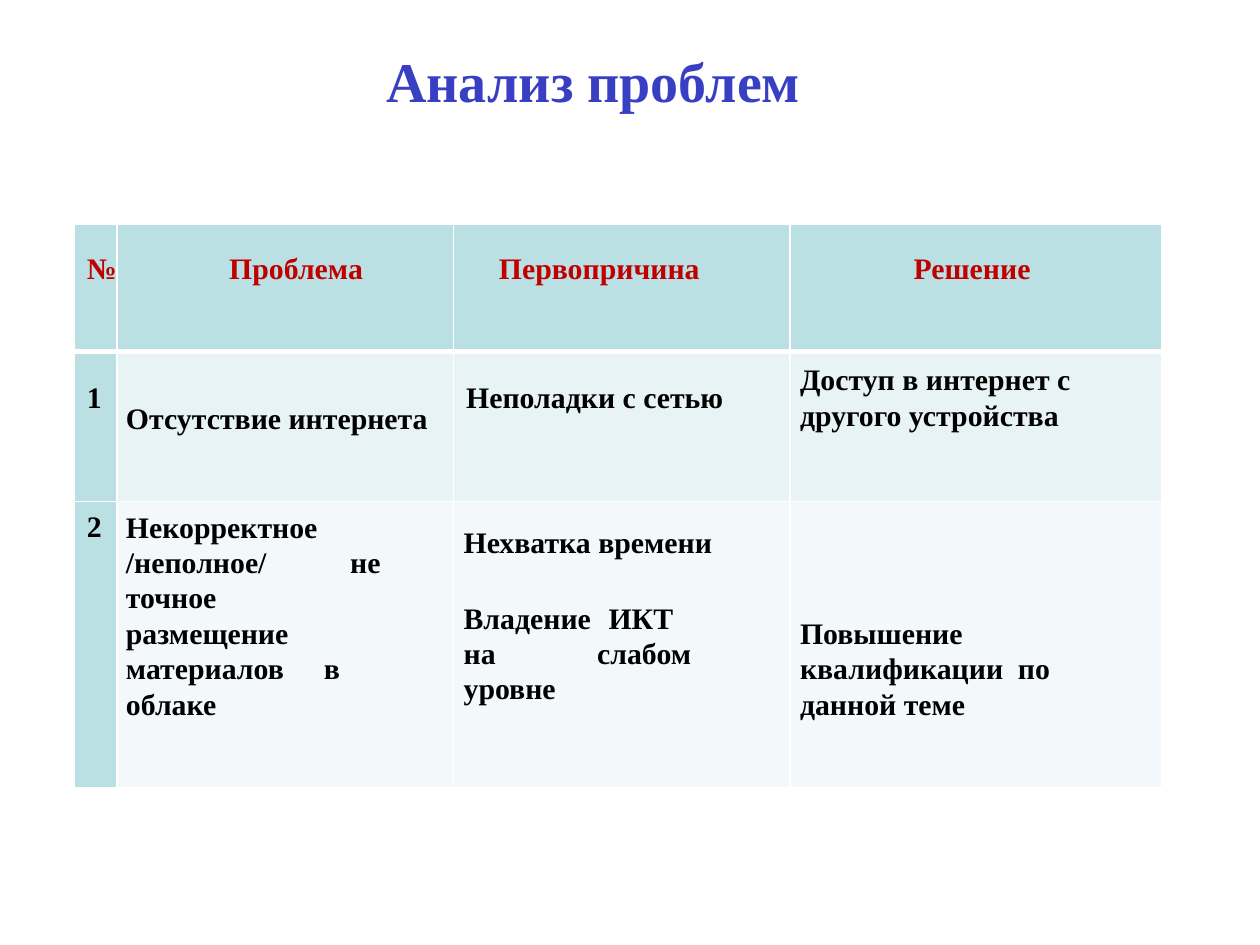
"""Build the problem analysis slide."""
from dataclasses import dataclass

from lxml import etree
from pptx import Presentation
from pptx.dml.color import RGBColor
from pptx.enum.text import MSO_ANCHOR, MSO_AUTO_SIZE, PP_ALIGN
from pptx.oxml.ns import qn
from pptx.util import Inches, Pt

LEFT, CENTER = PP_ALIGN.LEFT, PP_ALIGN.CENTER
TOP, MIDDLE, BOTTOM = MSO_ANCHOR.TOP, MSO_ANCHOR.MIDDLE, MSO_ANCHOR.BOTTOM
NO_FIT = MSO_AUTO_SIZE.NONE
TITLE_ONLY = 5
GRID_COLUMNS, GRID_ROWS = 100, 75


@dataclass(frozen=True)
class Theme:
    """Colours, font and type sizes."""
    font: str = "Times New Roman"
    title_size: float = 32
    body_size: float = 17
    line_spacing: float = 1.07
    paragraph_gap: float = 23
    title: str = "383FC2"
    heading: str = "C00000"
    text: str = "000000"
    border: str = "FFFFFF"
    accent: str = "BBE0E3"
    bands: tuple = ("E7F3F4", "F3F9FA")


@dataclass(frozen=True)
class Entry:
    """Text and layout of one table cell, with lengths in grid columns."""
    text: str
    indent: float = 0
    anchor: int = MIDDLE
    align: int = LEFT
    tabs: tuple = ()


class SlideBuilder:
    """Hold the theme and the current slide."""

    def __init__(self, deck, theme):
        """Add a title-only page to the deck."""
        self.theme = theme
        self.column = deck.slide_width / GRID_COLUMNS
        self.row = deck.slide_height / GRID_ROWS
        self.page = deck.slides.add_slide(deck.slide_layouts[TITLE_ONLY])

    def across(self, columns):
        """Convert grid columns to a length."""
        return round(columns * self.column)

    def down(self, rows):
        """Convert grid rows to a length."""
        return round(rows * self.row)

    def style(self, para, size, color, align):
        """Format a paragraph and its runs."""
        para.alignment = align
        for span in para.runs:
            span.font.name = self.theme.font
            span.font.size = Pt(size)
            span.font.bold = True
            span.font.color.rgb = RGBColor.from_string(color)

    def title(self, text, left, top, width, height):
        """Fill and place the title placeholder."""
        box = self.page.shapes.title
        box.left, box.top = self.across(left), self.down(top)
        box.width, box.height = self.across(width), self.down(height)
        frame = box.text_frame
        frame.text = text
        frame.word_wrap = False
        frame.auto_size = NO_FIT
        frame.vertical_anchor = TOP
        self.style(frame.paragraphs[0], self.theme.title_size, self.theme.title, CENTER)

    def borders(self, cell, top, bottom):
        """Draw the four cell borders."""
        properties = cell._tc.get_or_add_tcPr()
        for side, width in (("L", 1), ("R", 1), ("T", top), ("B", bottom)):
            line = etree.SubElement(properties, qn(f"a:ln{side}"), w=str(Pt(width)))
            fill = etree.SubElement(line, qn("a:solidFill"))
            etree.SubElement(fill, qn("a:srgbClr"), val=self.theme.border)

    def tab_stops(self, para, stops):
        """Add tab stops to a paragraph."""
        tabs = etree.SubElement(para._p.get_or_add_pPr(), qn("a:tabLst"))
        for position, kind in stops:
            etree.SubElement(tabs, qn("a:tab"), pos=str(self.across(position)), algn=kind)

    def cell(self, cell, entry, fill, color):
        """Write and format one table cell."""
        cell.fill.solid()
        cell.fill.fore_color.rgb = RGBColor.from_string(fill)
        cell.vertical_anchor = entry.anchor
        cell.margin_left, cell.margin_right = self.across(entry.indent), self.across(0.1)
        cell.margin_top, cell.margin_bottom = self.down(0.6), self.down(5.2)
        cell.text_frame.text = entry.text
        for index, para in enumerate(cell.text_frame.paragraphs):
            para.line_spacing = self.theme.line_spacing
            if index:
                para.space_before = Pt(self.theme.paragraph_gap)
            if entry.tabs:
                self.tab_stops(para, entry.tabs)
            self.style(para, self.theme.body_size, color, entry.align)

    def table(self, entries, left, top, widths, heights):
        """Add a table with a heading row and a number column."""
        theme = self.theme
        frame = self.page.shapes.add_table(
            len(heights), len(widths), self.across(left), self.down(top),
            self.across(sum(widths)), self.down(sum(heights)))
        grid = frame.table
        grid.horz_banding = False
        for column, width in zip(grid.columns, widths):
            column.width = self.across(width)
        for row, height in zip(grid.rows, heights):
            row.height = self.down(height)
        for r, row in enumerate(entries):
            for c, entry in enumerate(row):
                cell = grid.cell(r, c)
                self.borders(cell, 3 if r == 1 else 1, 3 if r == 0 else 1)
                fill = theme.accent if r == 0 or c == 0 else theme.bands[r - 1]
                self.cell(cell, entry, fill, theme.text if r else theme.heading)


ENTRIES = (
    (
        Entry("№", 1, BOTTOM),
        Entry("\tПроблема ", 0, BOTTOM, tabs=((14.5, "ctr"),)),
        Entry("Первопричина ", 3.6, BOTTOM),
        Entry("Решение ", 0.1, BOTTOM, CENTER),
    ),
    (
        Entry("1 ", 1),
        Entry("Отсутствие интернета ", 0.7, BOTTOM),
        Entry("Неполадки с сетью ", 1),
        Entry("Доступ в интернет с другого устройства ", 0.8),
    ),
    (
        Entry("2 ", 1, TOP),
        Entry("Некорректное /неполное/\t\tне точное\vразмещение\vматериалов\tв\vоблаке ",
              0.7, tabs=((15.7, "l"), (17.8, "l"))),
        Entry("Нехватка времени \nВладение\t\tИКТ\vна\tслабом\vуровне ",
              0.8, tabs=((10.6, "l"), (11.5, "l"))),
        Entry("Повышение квалификации\tпо\vданной теме ", 0.8, BOTTOM,
              tabs=((17.3, "l"),)),
    ),
)


def main():
    """Build and save the deck."""
    deck = Presentation()
    deck.slide_width, deck.slide_height = Inches(10), Inches(7.5)
    builder = SlideBuilder(deck, Theme())
    builder.title("Анализ проблем ", 29.5, 3.2, 36.3, 11.8)
    builder.table(ENTRIES, 5.9, 17.8, (3.4, 26.7, 26.7, 29.5), (10.1, 11.9, 22.7))
    deck.save("out.pptx")


if __name__ == "__main__":
    main()
